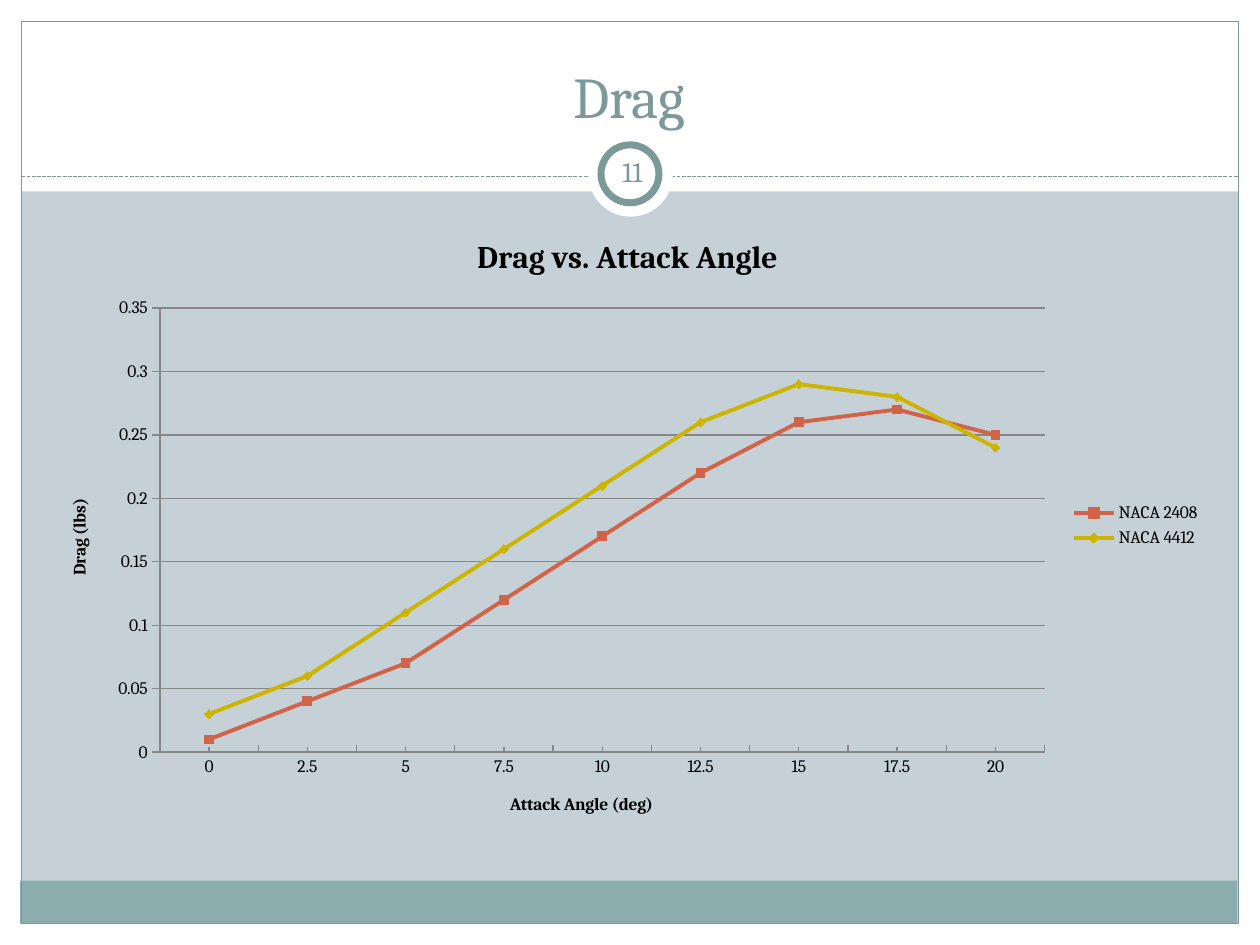
from lxml.etree import SubElement
from pptx import Presentation
from pptx.chart.data import CategoryChartData
from pptx.dml.color import RGBColor
from pptx.enum.chart import XL_CHART_TYPE as ChartType
from pptx.enum.chart import XL_LEGEND_POSITION as LegendPosition
from pptx.enum.chart import XL_MARKER_STYLE as Marker
from pptx.enum.chart import XL_TICK_MARK as Tick
from pptx.enum.dml import MSO_LINE_DASH_STYLE as Dash
from pptx.enum.shapes import MSO_CONNECTOR_TYPE as Connector
from pptx.enum.shapes import MSO_SHAPE as Shape
from pptx.enum.text import MSO_ANCHOR as Anchor
from pptx.enum.text import PP_ALIGN as Align
from pptx.oxml.ns import qn
from pptx.util import Emu, Pt

PX = 9144
FONT = "Cambria"
TEAL, BAND, WHITE, BACKDROP = "7C999A", "8CADAE", "FFFFFF", "C5D1D7"
BLACK, GRID = "000000", "878787"
FRAMES = [
    (0, 733, 1000, 17, WHITE),
    (0, 0, 1000, 152, WHITE),
    (0, 0, 17, 750, WHITE),
    (983, 0, 17, 750, WHITE),
    (16, 699, 966, 34, BAND),
]
ANGLES = ["0", "2.5", "5", "7.5", "10", "12.5", "15", "17.5", "20"]
AIRFOILS = [
    ("NACA 2408", "D16349", Marker.SQUARE,
     [0.01, 0.04, 0.07, 0.12, 0.17, 0.22, 0.26, 0.27, 0.25]),
    ("NACA 4412", "CCB400", Marker.DIAMOND,
     [0.03, 0.06, 0.11, 0.16, 0.21, 0.26, 0.29, 0.28, 0.24]),
]
PLOT_LAYOUT = [("layoutTarget", "inner"), ("xMode", "edge"), ("yMode", "edge"),
               ("x", "0.101"), ("y", "0.155"), ("w", "0.755"), ("h", "0.705")]


def px(*lengths):
    """Turn pixel lengths into EMU."""
    return [Emu(length * PX) for length in lengths]


def color(code):
    """Turn a hex string into a colour."""
    return RGBColor.from_string(code)


def style_line(line, code, width):
    """Set the colour and width of a line."""
    line.color.rgb = color(code)
    line.width = Pt(width)


def style_font(font, size, code, bold=False):
    """Set the face, size, colour and weight of a font."""
    font.name, font.size, font.bold = FONT, Pt(size), bold
    font.color.rgb = color(code)


def add_block(page, kind, at, fill=None, line=None, width=0.75):
    """Add a preset shape with an optional fill and outline."""
    block = page.shapes.add_shape(kind, *px(*at))
    block.shadow.inherit = False
    if fill:
        block.fill.solid()
        block.fill.fore_color.rgb = color(fill)
    else:
        block.fill.background()
    if line:
        style_line(block.line, line, width)
    else:
        block.line.fill.background()


def add_divider(page, start, end):
    """Add the dashed line under the title."""
    divider = page.shapes.add_connector(Connector.STRAIGHT, *px(*start, *end))
    style_line(divider.line, TEAL, 0.75)
    divider.line.dash_style = Dash.SQUARE_DOT
    SubElement(divider._element.spPr, qn("a:effectLst"))


def add_text(page, at, text, size, anchor):
    """Add a centred line of text."""
    frame = page.shapes.add_textbox(*px(*at)).text_frame
    frame.word_wrap = True
    frame.vertical_anchor = anchor
    frame.margin_left, frame.margin_right, frame.margin_top, frame.margin_bottom = px(5, 5, 5, 5)
    frame.text = text
    para = frame.paragraphs[0]
    para.alignment = Align.CENTER
    style_font(para.runs[0].font, size, TEAL)


def set_title(owner, text, size):
    """Give a chart or an axis a bold title."""
    frame = (owner.chart_title if hasattr(owner, "chart_title") else owner.axis_title).text_frame
    frame.text = text
    style_font(frame.paragraphs[0].runs[0].font, size, BLACK, True)


def place_plot(chart):
    """Fix the inner plot area within the chart."""
    plot_area = chart._chartSpace.chart.plotArea
    for old in plot_area.findall(qn("c:layout")):
        plot_area.remove(old)
    layout = SubElement(plot_area, qn("c:layout"))
    plot_area.insert(0, layout)
    manual = SubElement(layout, qn("c:manualLayout"))
    for name, value in PLOT_LAYOUT:
        SubElement(manual, qn(f"c:{name}")).set("val", value)


def style_axes(chart):
    """Set the titles, ticks, scale and gridlines of both axes."""
    angle, drag = chart.category_axis, chart.value_axis
    set_title(angle, "Attack Angle (deg)", 10)
    set_title(drag, "Drag (lbs)", 10)
    angle.major_tick_mark = angle.minor_tick_mark = Tick.INSIDE
    drag.major_tick_mark, drag.minor_tick_mark = Tick.CROSS, Tick.NONE
    drag.minimum_scale, drag.maximum_scale, drag.major_unit = 0, 0.35, 0.05
    drag.tick_labels.number_format = "General"
    drag.tick_labels.number_format_is_linked = False
    drag.has_major_gridlines = True
    for part in (angle, drag, drag.major_gridlines):
        style_line(part.format.line, GRID, 0.75)


def add_drag_chart(page, at):
    """Add the line chart of drag against attack angle."""
    data = CategoryChartData()
    data.categories = ANGLES
    for name, _, _, values in AIRFOILS:
        data.add_series(name, values)
    chart = page.shapes.add_chart(ChartType.LINE_MARKERS, *px(*at), data).chart
    style_font(chart.font, 10, BLACK)
    set_title(chart, "Drag vs. Attack Angle", 18)
    chart.has_legend = True
    chart.legend.position = LegendPosition.RIGHT
    chart.legend.include_in_layout = False
    chart.plots[0].vary_by_categories = False
    for series, (_, code, marker, _) in zip(chart.plots[0].series, AIRFOILS):
        series.smooth = False
        style_line(series.format.line, code, 2.25)
        series.marker.style, series.marker.size = marker, 5
        series.marker.format.fill.solid()
        series.marker.format.fill.fore_color.rgb = color(code)
        series.marker.format.line.color.rgb = color(code)
    style_axes(chart)
    place_plot(chart)


def main():
    """Build the drag slide and save it."""
    deck = Presentation()
    deck.slide_width, deck.slide_height = px(1000, 750)
    page = deck.slides.add_slide(deck.slide_layouts[6])
    page.background.fill.solid()
    page.background.fill.fore_color.rgb = color(BACKDROP)
    for *at, fill in FRAMES:
        add_block(page, Shape.RECTANGLE, at, fill)
    add_block(page, Shape.RECTANGLE, (17, 17, 966, 716), line=TEAL)
    add_divider(page, (17, 140), (983, 140))
    add_block(page, Shape.OVAL, (467, 105, 67, 67), WHITE)
    add_block(page, Shape.OVAL, (477, 115, 46, 46), WHITE, TEAL, 4)
    add_text(page, (33, 25, 933, 83), "Drag", 33, Anchor.BOTTOM)
    add_text(page, (477, 112, 50, 48), "11", 16, Anchor.MIDDLE)
    add_drag_chart(page, (33, 167, 930, 500))
    deck.save("out.pptx")


if __name__ == "__main__":
    main()
